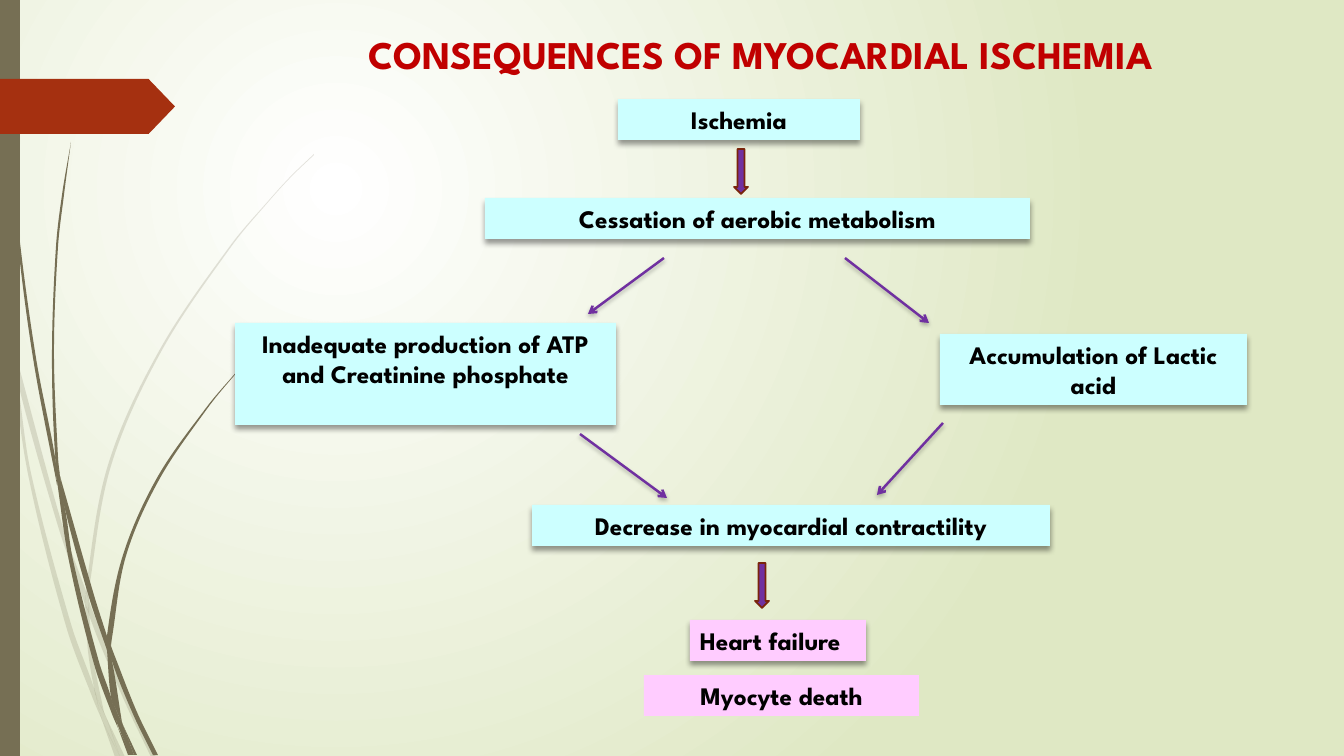
from dataclasses import dataclass
from math import dist

from lxml import etree
from pptx import Presentation
from pptx.dml.color import RGBColor
from pptx.enum.shapes import MSO_CONNECTOR, MSO_SHAPE
from pptx.enum.text import MSO_ANCHOR, MSO_AUTO_SIZE, PP_ALIGN
from pptx.oxml.ns import qn
from pptx.util import Pt

RECTANGLE, DOWN_ARROW, PENTAGON = MSO_SHAPE.RECTANGLE, MSO_SHAPE.DOWN_ARROW, MSO_SHAPE.PENTAGON
STRAIGHT = MSO_CONNECTOR.STRAIGHT
LEFT, CENTER = PP_ALIGN.LEFT, PP_ALIGN.CENTER
TOP = MSO_ANCHOR.TOP
FIXED_SIZE = MSO_AUTO_SIZE.NONE
EMU_PER_PX = 914400 / 100.8


@dataclass(frozen=True)
class Theme:
    """Colours and type of the slide."""
    font: str = "League Spartan"
    title_size: int = 28
    body_size: int = 18
    title: str = "C00000"
    text: str = "000000"
    cause: str = "CCFFFF"
    outcome: str = "FFCCFF"
    arrow: str = "7030A0"
    arrow_edge: str = "7A240C"
    banner: str = "A53010"
    wisp: str = "766F54"
    glow: str = "FFFFFF"
    ground: str = "DFE8C4"


THEME = Theme()
BOX_SHADOW = {"alpha": 40, "blur": 4, "distance": 3}
LINE_SHADOW = {"alpha": 25, "blur": 3, "distance": 2}

PALE_WISPS = [
    ([(0, 284), (9, 325), (11, 353)], [(0, 301), (10, 347), (11, 353)]),
    ([(14, 348), (17, 379), (58, 526), (85, 604)], [(14, 348), (62, 524), (86, 591)]),
    ([(89, 601), (89, 615), (124, 700), (151, 757)],
     [(89, 601), (93, 612), (128, 698), (156, 757)]),
    ([(106, 717), (120, 757)], [(106, 717), (125, 757)]),
    ([(11, 353), (28, 474), (66, 626), (93, 699), (102, 720)],
     [(11, 353), (17, 379), (31, 473), (71, 624), (94, 688), (100, 713), (102, 720)]),
    ([(85, 604), (88, 651), (94, 688), (97, 698), (106, 717)],
     [(85, 604), (89, 613), (92, 651), (104, 712), (106, 717)]),
    ([(314, 154), (291, 176), (270, 199), (230, 246), (159, 351), (108, 465), (86, 589),
      (89, 601)],
     [(314, 155), (292, 176), (270, 200), (231, 247), (161, 352), (111, 466), (89, 589),
      (89, 601)]),
    ([(102, 720), (115, 757)], [(102, 720), (120, 757)]),
    ([(86, 591), (85, 604), (89, 613)], [(86, 591), (89, 601), (89, 615)]),
    ([(94, 688), (100, 713), (102, 720), (120, 757)],
     [(94, 688), (97, 698), (106, 717), (120, 757)]),
]
DARK_WISPS = [
    ([(3, 0), (4, 48), (7, 111), (17, 235), (33, 358), (57, 485)],
     [(4, 0), (5, 48), (8, 110), (19, 234), (36, 358), (55, 457), (57, 485)]),
    ([(60, 476), (65, 509), (89, 597), (107, 650)], [(60, 476), (94, 595), (107, 636)]),
    ([(111, 646), (112, 661), (133, 714), (153, 755)],
     [(111, 646), (114, 654), (137, 712), (158, 755)]),
    ([(57, 481), (69, 561), (94, 664), (112, 714), (118, 728)],
     [(57, 481), (65, 509), (73, 560), (99, 662), (111, 697), (117, 723), (118, 728)]),
    ([(71, 142), (62, 195), (56, 247), (52, 352), (55, 453), (60, 476)],
     [(71, 142), (64, 195), (58, 247), (54, 352), (58, 457), (60, 476)]),
    ([(123, 725), (134, 755)], [(123, 725), (137, 755)]),
    ([(55, 453), (57, 481), (65, 509)], [(55, 453), (60, 476), (65, 509)]),
    ([(262, 347), (247, 361), (233, 376), (206, 408), (157, 478), (123, 555), (107, 636),
      (111, 646)],
     [(263, 347), (247, 362), (233, 377), (207, 409), (159, 480), (126, 556), (112, 638),
      (111, 646)]),
    ([(118, 728), (128, 755)], [(118, 728), (132, 755)]),
    ([(107, 650), (111, 697), (117, 712), (123, 725)],
     [(107, 650), (112, 661), (122, 722), (123, 725)]),
    ([(107, 636), (107, 650), (112, 661)], [(107, 636), (111, 646), (112, 661)]),
    ([(111, 697), (117, 723), (131, 755)], [(111, 697), (117, 712), (123, 725), (134, 755)]),
]
STEPS = [
    ("Ischemia", (618, 99, 242, 41), THEME.cause, CENTER, BOX_SHADOW),
    ("Cessation of aerobic metabolism", (485, 198, 545, 41), THEME.cause, CENTER, BOX_SHADOW),
    ("Inadequate production of ATP and Creatinine phosphate", (235, 323, 381, 102),
     THEME.cause, CENTER, BOX_SHADOW),
    ("Accumulation of Lactic acid", (940, 334, 307, 71), THEME.cause, CENTER, BOX_SHADOW),
    ("Decrease in myocardial contractility", (532, 505, 518, 41), THEME.cause, CENTER,
     BOX_SHADOW),
    ("Heart failure", (690, 620, 176, 41), THEME.outcome, LEFT, BOX_SHADOW),
    ("Myocyte death", (644, 675, 275, 41), THEME.outcome, CENTER, None),
]
BRANCHES = [(664, 258, 588, 314), (845, 258, 929, 323), (580, 434, 667, 498), (943, 423, 877, 495)]
BLOCK_ARROWS = [(734, 149), (755, 563)]


def px(*lengths):
    """Turn px lengths into EMU."""
    return [round(length * EMU_PER_PX) for length in lengths]


def color(code):
    """Read a hex colour."""
    return RGBColor.from_string(code)


def add_xml(parent, tag, **attributes):
    """Append a drawing element with attributes."""
    element = etree.SubElement(parent, qn(f"a:{tag}"))
    for name, value in attributes.items():
        element.set(name, str(value))
    return element


def set_shadow(shape, shadow):
    """Give a shape a soft shadow below it, or none."""
    effects = add_xml(shape._element.spPr, "effectLst")
    if shadow:
        outer = add_xml(effects, "outerShdw", blurRad=Pt(shadow["blur"]),
                        dist=Pt(shadow["distance"]), dir=90 * 60000, rotWithShape=0)
        black = add_xml(outer, "srgbClr", val="000000")
        add_xml(black, "alpha", val=shadow["alpha"] * 1000)


def paint(shape, fill, edge=None, edge_width=1.25, shadow=None):
    """Set fill, outline and shadow of a shape."""
    shape.fill.solid()
    shape.fill.fore_color.rgb = color(fill)
    if edge:
        shape.line.color.rgb = color(edge)
        shape.line.width = Pt(edge_width)
    else:
        shape.line.fill.background()
    set_shadow(shape, shadow)


def write(shape, text, size=THEME.body_size, ink=THEME.text, align=CENTER):
    """Put one bold paragraph into a shape."""
    frame = shape.text_frame
    frame.text = text
    frame.word_wrap = True
    frame.auto_size = FIXED_SIZE
    frame.vertical_anchor = TOP
    paragraph = frame.paragraphs[0]
    paragraph.alignment = align
    font = paragraph.runs[0].font
    font.name, font.size, font.bold = THEME.font, Pt(size), True
    font.color.rgb = color(ink)


def bend(edge):
    """Return the two Bezier handles of each segment along an edge."""
    padded = [edge[0], *edge, edge[-1]]
    handles = []
    for a, b, c, d in zip(padded, padded[1:], padded[2:], padded[3:]):
        start, end = (dist(b, c) / 3 / dist(*pair) for pair in ((a, c), (b, d)))
        handles.append(([q + (r - p) * start for p, q, r in zip(a, b, c)],
                        [r - (s - q) * end for q, r, s in zip(b, c, d)]))
    return handles


def add_wisp(slide, left_edge, right_edge, opacity=100):
    """Draw a piece of a grass blade between two curved edges."""
    back_edge = right_edge[::-1]
    outline = [px(*point) for point in left_edge + back_edge]
    builder = slide.shapes.build_freeform(*outline[0])
    builder.add_line_segments(outline[1:], close=True)
    shape = builder.convert_to_shape()
    paint(shape, THEME.wisp)
    segments = list(shape._element.iter(qn("a:lnTo")))
    for segment, handles in zip(segments, bend(left_edge) + [None] + bend(back_edge)):
        if handles:
            segment.tag = qn("a:cubicBezTo")
            for index, handle in enumerate(handles):
                x, y = px(*handle)
                point = add_xml(segment, "pt", x=x - shape.left, y=y - shape.top)
                segment.insert(index, point)
    if opacity < 100:
        fill_color = shape._element.spPr.find(qn("a:solidFill"))[0]
        add_xml(fill_color, "alpha", val=opacity * 1000)


def add_block(slide, kind, box, fill, **look):
    """Add a painted preset shape."""
    shape = slide.shapes.add_shape(kind, *px(*box))
    paint(shape, fill, **look)
    return shape


def add_branch(slide, ends):
    """Add a thin arrow between two steps."""
    connector = slide.shapes.add_connector(STRAIGHT, *px(*ends))
    connector.line.color.rgb = color(THEME.arrow)
    connector.line.width = Pt(1.75)
    add_xml(connector.line._get_or_add_ln(), "tailEnd", type="arrow")
    set_shadow(connector, LINE_SHADOW)


def set_background(slide):
    """Fill the background with a radial glow."""
    fill = slide.background.fill
    fill.gradient()
    for stop, position, code in zip(fill.gradient_stops, (0, 1), (THEME.glow, THEME.ground)):
        stop.position = position
        stop.color.rgb = color(code)
    gradient = slide._element.cSld.find(".//" + qn("a:gradFill"))
    gradient.remove(gradient.find(qn("a:lin")))
    circle = add_xml(gradient, "path", path="circle")
    add_xml(circle, "fillToRect", l=50000, t=50000, r=100000, b=100000)


def add_title(slide, text, box):
    """Place and format the title."""
    title = slide.shapes.title
    title.left, title.top, title.width, title.height = px(*box)
    write(title, text, size=THEME.title_size, ink=THEME.title)


def main():
    """Build the slide and save it."""
    presentation = Presentation()
    presentation.slide_width, presentation.slide_height = px(1344, 756)
    slide = presentation.slides.add_slide(presentation.slide_layouts[5])
    set_background(slide)
    for wisps, opacity in ((PALE_WISPS, 20), (DARK_WISPS, 100)):
        for edges in wisps:
            add_wisp(slide, *edges, opacity=opacity)
    add_block(slide, RECTANGLE, (0, 0, 20, 756), THEME.wisp)
    banner = add_block(slide, PENTAGON, (0, 79, 175, 55), THEME.banner)
    banner.adjustments[0] = 0.48
    add_title(slide, "CONSEQUENCES OF MYOCARDIAL ISCHEMIA ", (274, 25, 983, 67))
    for text, box, fill, align, shadow in STEPS:
        step = add_block(slide, RECTANGLE, box, fill, shadow=shadow)
        write(step, text, align=align)
    for left, top in BLOCK_ARROWS:
        add_block(slide, DOWN_ARROW, (left, top, 14, 45), THEME.arrow, edge=THEME.arrow_edge)
    for ends in BRANCHES:
        add_branch(slide, ends)
    presentation.save("out.pptx")


if __name__ == "__main__":
    main()
